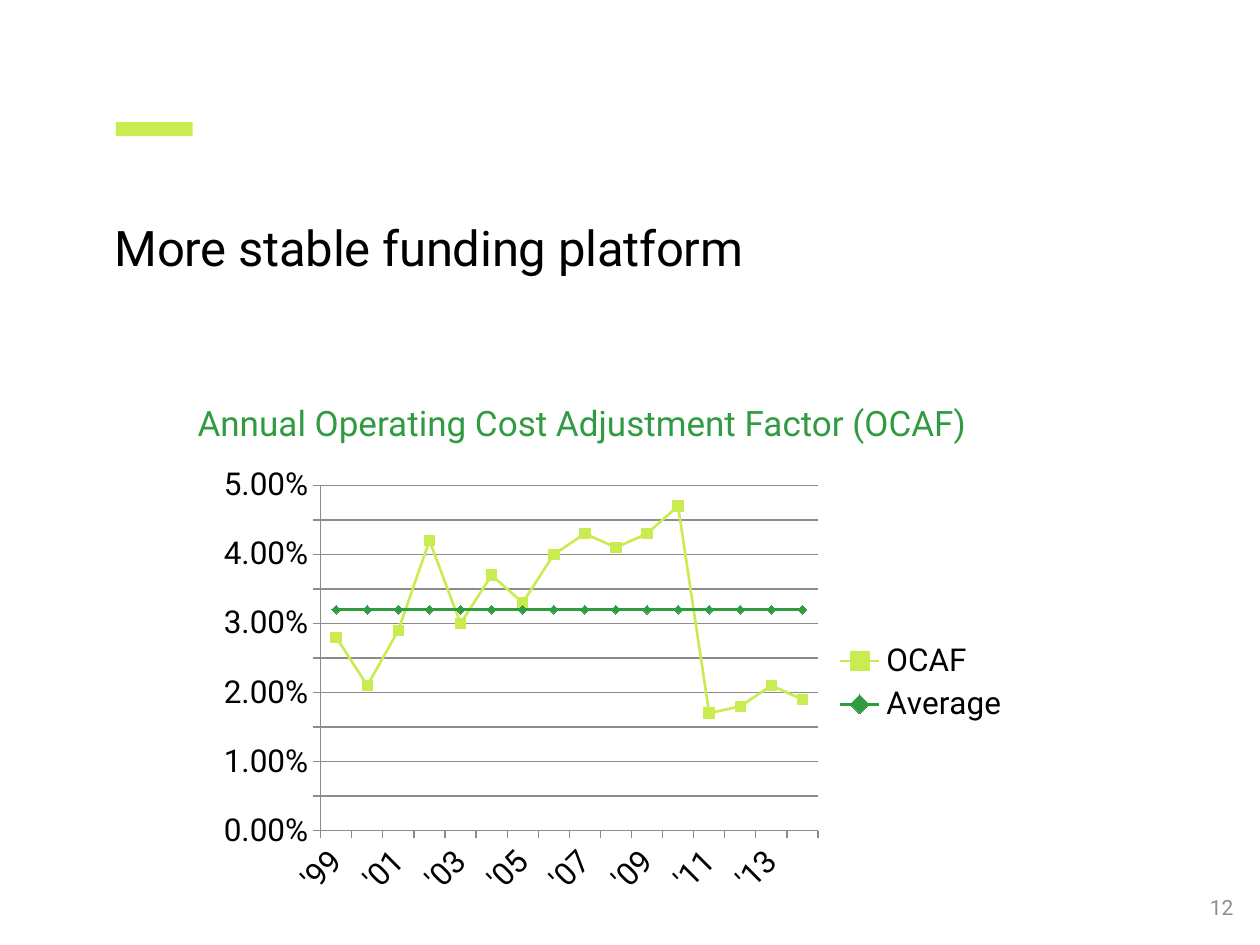
from lxml import etree
from pptx import Presentation
from pptx.chart.data import CategoryChartData
from pptx.dml.color import RGBColor
from pptx.enum.chart import XL_CHART_TYPE, XL_LEGEND_POSITION, XL_MARKER_STYLE, XL_TICK_MARK
from pptx.enum.shapes import MSO_SHAPE
from pptx.enum.text import MSO_ANCHOR, MSO_AUTO_SIZE, PP_ALIGN
from pptx.oxml import parse_xml
from pptx.oxml.ns import nsdecls, qn
from pptx.util import Pt

LINE_MARKERS = XL_CHART_TYPE.LINE_MARKERS
LEGEND_RIGHT = XL_LEGEND_POSITION.RIGHT
SQUARE, DIAMOND = XL_MARKER_STYLE.SQUARE, XL_MARKER_STYLE.DIAMOND
TICK_OUTSIDE = XL_TICK_MARK.OUTSIDE
RECTANGLE = MSO_SHAPE.RECTANGLE
TOP, MIDDLE = MSO_ANCHOR.TOP, MSO_ANCHOR.MIDDLE
NO_AUTOFIT = MSO_AUTO_SIZE.NONE
LEFT, RIGHT = PP_ALIGN.LEFT, PP_ALIGN.RIGHT

FONT = "Roboto"
LIME = RGBColor(0xC9, 0xEC, 0x51)
GREEN = RGBColor(0x31, 0x9B, 0x42)
BLACK = RGBColor(0, 0, 0)
GRAY = RGBColor(0x8C, 0x8C, 0x8C)

OCAF = [0.028, 0.021, 0.029, 0.042, 0.03, 0.037, 0.033, 0.04,
        0.043, 0.041, 0.043, 0.047, 0.017, 0.018, 0.021, 0.019]
AVERAGE = 0.032


def write_text(shape, text, size, color, anchor, alignment=LEFT):
    frame = shape.text_frame
    frame.text = text
    frame.word_wrap = True
    frame.auto_size = NO_AUTOFIT
    frame.vertical_anchor = anchor
    paragraph = frame.paragraphs[0]
    paragraph.alignment = alignment
    paragraph.font.name = FONT
    paragraph.font.size = Pt(size)
    paragraph.font.color.rgb = color


def manual_layout(x, y, width, height, target=""):
    """Return a c:layout element placed in fractions of the chart area."""
    return parse_xml(
        f'<c:layout {nsdecls("c")}><c:manualLayout>{target}'
        '<c:xMode val="edge"/><c:yMode val="edge"/>'
        f'<c:x val="{x}"/><c:y val="{y}"/><c:w val="{width}"/><c:h val="{height}"/>'
        '</c:manualLayout></c:layout>')


presentation = Presentation()
presentation.slide_width, presentation.slide_height = Pt(720), Pt(540)
slide = presentation.slides.add_slide(presentation.slide_layouts[5])

# Accent bar and title
accent = slide.shapes.add_shape(RECTANGLE, Pt(66.24), Pt(69.84), Pt(43.92), Pt(7.92))
accent.shadow.inherit = False
accent.fill.solid()
accent.fill.fore_color.rgb = LIME
accent.line.fill.background()

title = slide.shapes.title
title.left, title.top, title.width, title.height = Pt(65.5), Pt(124.5), Pt(421), Pt(75.6)
write_text(title, "More stable funding platform", 28, BLACK, TOP)
frame = title.text_frame
frame.margin_left = frame.margin_top = frame.margin_right = frame.margin_bottom = 0
frame.paragraphs[0].runs[0].font._element.set("spc", "-10")

# Line chart
data = CategoryChartData(number_format="0.00%")
data.categories = [f"'{year % 100:02d}" for year in range(1999, 2015)]
data.add_series("OCAF", OCAF)
data.add_series("Average", [AVERAGE] * len(OCAF))
chart = slide.shapes.add_chart(
    LINE_MARKERS, Pt(118), Pt(262), Pt(466), Pt(256.3), data).chart
chart.has_title = False
chart.font.name = FONT
chart.font.size = Pt(18)
chart.font.color.rgb = BLACK

for series, color, marker_style, marker_size in zip(
        chart.plots[0].series, (LIME, GREEN), (SQUARE, DIAMOND), (6, 5)):
    series.smooth = False
    series.format.line.color.rgb = color
    series.format.line.width = Pt(1.5)
    series.marker.style = marker_style
    series.marker.size = marker_size
    series.marker.format.fill.solid()
    series.marker.format.fill.fore_color.rgb = color
    series.marker.format.line.color.rgb = color

category_axis, value_axis = chart.category_axis, chart.value_axis
for axis in (category_axis, value_axis):
    axis.major_tick_mark = TICK_OUTSIDE
    axis.format.line.color.rgb = GRAY
    axis.format.line.width = Pt(0.75)
value_axis.minimum_scale, value_axis.maximum_scale = 0, 0.05
value_axis.major_unit = 0.005
value_axis.has_major_gridlines = True
value_axis.major_gridlines.format.line.color.rgb = GRAY
value_axis.major_gridlines.format.line.width = Pt(0.75)
value_axis.tick_labels.number_format = "0.00%"
value_axis.tick_labels.number_format_is_linked = False

# Slanted labels on every second year
category_axis.tick_labels.font.size = Pt(18)
category_axis._element.find(qn("c:txPr")).find(qn("a:bodyPr")).set("rot", "-2700000")
label_skip = etree.Element(qn("c:tickLblSkip"), val="2")
category_axis._element.find(qn("c:noMultiLvlLbl")).addprevious(label_skip)

chart.has_legend = True
chart.legend.position = LEGEND_RIGHT
chart.legend.include_in_layout = False
chart.legend._element.find(qn("c:legendPos")).addnext(
    manual_layout(0.77, 0.4, 0.23, 0.24))

plot_area = chart._chartSpace.chart.plotArea
for layout in plot_area.findall(qn("c:layout")):
    plot_area.remove(layout)
plot_area.insert(0, manual_layout(
    0.14, 0.06, 0.61, 0.77, '<c:layoutTarget val="inner"/>'))

# Chart heading and page number
heading = slide.shapes.add_textbox(Pt(105.84), Pt(210.24), Pt(506.16), Pt(62.64))
write_text(heading, "Annual Operating Cost Adjustment Factor (OCAF)", 20, GREEN, MIDDLE)
page_number = slide.shapes.add_textbox(Pt(550), Pt(504), Pt(162), Pt(28.8))
write_text(page_number, "12", 12, GRAY, MIDDLE, RIGHT)

presentation.save("out.pptx")
